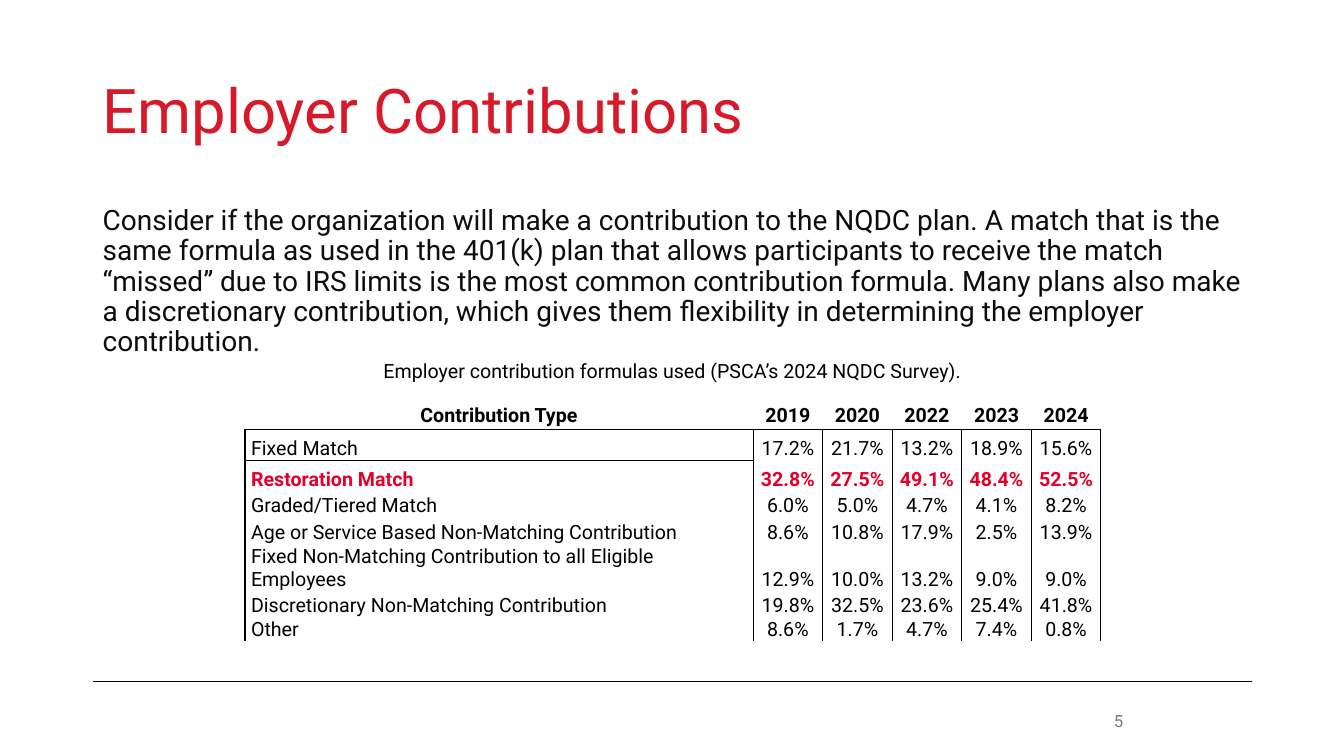
from lxml.etree import SubElement
from pptx import Presentation
from pptx.dml.color import RGBColor
from pptx.enum.shapes import MSO_CONNECTOR
from pptx.enum.text import MSO_ANCHOR, PP_ALIGN
from pptx.oxml import parse_xml
from pptx.oxml.ns import nsdecls, qn
from pptx.util import Inches, Pt

FONT = "Roboto"
COLORS = {
    "title": "D61A29",
    "body": "0D0D0D",
    "black": "000000",
    "highlight": "E4002B",
    "number": "797979",
}
TITLE = "Employer Contributions"
BODY = (
    "Consider if the organization will make a contribution to the NQDC plan. "
    "A match that is the same formula as used in the 401(k) plan that allows "
    "participants to receive the match “missed” due to IRS limits is the most "
    "common contribution formula. Many plans also make a discretionary "
    "contribution, which gives them flexibility in determining the employer "
    "contribution."
)
CAPTION = "Employer contribution formulas used (PSCA’s 2024 NQDC Survey)."
SLIDE_NUMBER = "5"
TABLE_ROWS = [
    ("Contribution Type", "2019", "2020", "2022", "2023", "2024"),
    ("Fixed Match", "17.2%", "21.7%", "13.2%", "18.9%", "15.6%"),
    ("Restoration Match", "32.8%", "27.5%", "49.1%", "48.4%", "52.5%"),
    ("Graded/Tiered Match", "6.0%", "5.0%", "4.7%", "4.1%", "8.2%"),
    ("Age or Service Based Non-Matching Contribution",
     "8.6%", "10.8%", "17.9%", "2.5%", "13.9%"),
    ("Fixed Non-Matching Contribution to all Eligible Employees",
     "12.9%", "10.0%", "13.2%", "9.0%", "9.0%"),
    ("Discretionary Non-Matching Contribution",
     "19.8%", "32.5%", "23.6%", "25.4%", "41.8%"),
    ("Other", "8.6%", "1.7%", "4.7%", "7.4%", "0.8%"),
]
ROW_HEIGHTS = [0.27, 0.31, 0.31, 0.25, 0.27, 0.26, 0.26, 0.19]
LABEL_WIDTH, YEAR_WIDTH = 5.04, 0.69
HEADER_ROW, FIXED_ROW, RESTORATION_ROW = 0, 1, 2
LEFT, CONTENT_WIDTH = 0.92, 11.5
TABLE_LEFT, TABLE_TOP, TABLE_WIDTH = 2.43, 3.99, 8.48
RULE_TOP = 6.76


def write_text(frame, text, size=14, color="black", bold=False,
               align=PP_ALIGN.LEFT, line_spacing=None):
    frame.word_wrap = True
    paragraph = frame.paragraphs[0]
    paragraph.alignment = align
    if line_spacing:
        paragraph.line_spacing = line_spacing
    run = paragraph.add_run()
    run.text = text
    run.font.name = FONT
    run.font.size = Pt(size)
    run.font.bold = bold
    run.font.color.rgb = RGBColor.from_string(COLORS[color])


def add_text(slide, text, left, top, width, height,
             anchor=MSO_ANCHOR.TOP, **text_format):
    box = slide.shapes.add_textbox(
        Inches(left), Inches(top), Inches(width), Inches(height))
    box.text_frame.vertical_anchor = anchor
    write_text(box.text_frame, text, **text_format)


def set_borders(cell, visible_sides):
    """Draw 1 pt black lines on the sides named by L, R, T, B; clear the rest."""
    properties = cell._tc.get_or_add_tcPr()
    for position, side in enumerate("LRTB"):
        line = parse_xml(f'<a:ln{side} {nsdecls("a")} w="12700"/>')
        if side in visible_sides:
            fill = SubElement(line, qn("a:solidFill"))
            SubElement(fill, qn("a:srgbClr"), val=COLORS["black"])
        else:
            SubElement(line, qn("a:noFill"))
        properties.insert(position, line)


def borders_for(row, column):
    if row == HEADER_ROW:
        return "B"
    sides = "LR"
    if row == FIXED_ROW:
        sides += "T"
    if column == 0:
        sides += {FIXED_ROW: "B", RESTORATION_ROW: "T"}.get(row, "")
    return sides


def add_contribution_table(slide):
    table = slide.shapes.add_table(
        len(TABLE_ROWS), len(TABLE_ROWS[0]), Inches(TABLE_LEFT),
        Inches(TABLE_TOP), Inches(TABLE_WIDTH), Inches(sum(ROW_HEIGHTS))).table
    table.first_row = table.horz_banding = False
    for index, column in enumerate(table.columns):
        column.width = Inches(YEAR_WIDTH if index else LABEL_WIDTH)
    for row, values in enumerate(TABLE_ROWS):
        table.rows[row].height = Inches(ROW_HEIGHTS[row])
        is_header = row == HEADER_ROW
        is_restoration = row == RESTORATION_ROW
        for column, value in enumerate(values):
            cell = table.cell(row, column)
            cell.margin_left = cell.margin_right = Inches(0.06)
            cell.margin_top = cell.margin_bottom = 0
            cell.vertical_anchor = MSO_ANCHOR.MIDDLE if is_header else MSO_ANCHOR.BOTTOM
            cell.fill.background()
            write_text(
                cell.text_frame, value,
                color="highlight" if is_restoration else "black",
                bold=is_header or is_restoration,
                align=PP_ALIGN.CENTER if is_header or column else PP_ALIGN.LEFT)
            set_borders(cell, borders_for(row, column))


def add_footer_rule(slide):
    rule = slide.shapes.add_connector(
        MSO_CONNECTOR.STRAIGHT, Inches(LEFT), Inches(RULE_TOP),
        Inches(LEFT + CONTENT_WIDTH), Inches(RULE_TOP))
    rule.line.color.rgb = RGBColor.from_string(COLORS["black"])
    rule.line.width = Pt(0.5)
    SubElement(rule._element.spPr, qn("a:effectLst"))


def main():
    presentation = Presentation()
    presentation.slide_width = Inches(13.33)
    presentation.slide_height = Inches(7.5)
    slide = presentation.slides.add_slide(presentation.slide_layouts[6])

    add_footer_rule(slide)
    add_text(slide, TITLE, LEFT, 0.4, CONTENT_WIDTH, 1.45, MSO_ANCHOR.MIDDLE,
             size=44, color="title", line_spacing=0.9)
    add_text(slide, BODY, LEFT, 2, CONTENT_WIDTH, 4.76,
             size=20, color="body", line_spacing=0.9)
    add_text(slide, SLIDE_NUMBER, 9.42, 6.95, 1.82, 0.4, MSO_ANCHOR.MIDDLE,
             size=12, color="number", align=PP_ALIGN.RIGHT)
    add_text(slide, CAPTION, TABLE_LEFT, 3.51, TABLE_WIDTH, 0.34,
             align=PP_ALIGN.CENTER)
    add_contribution_table(slide)
    presentation.save("out.pptx")


if __name__ == "__main__":
    main()
